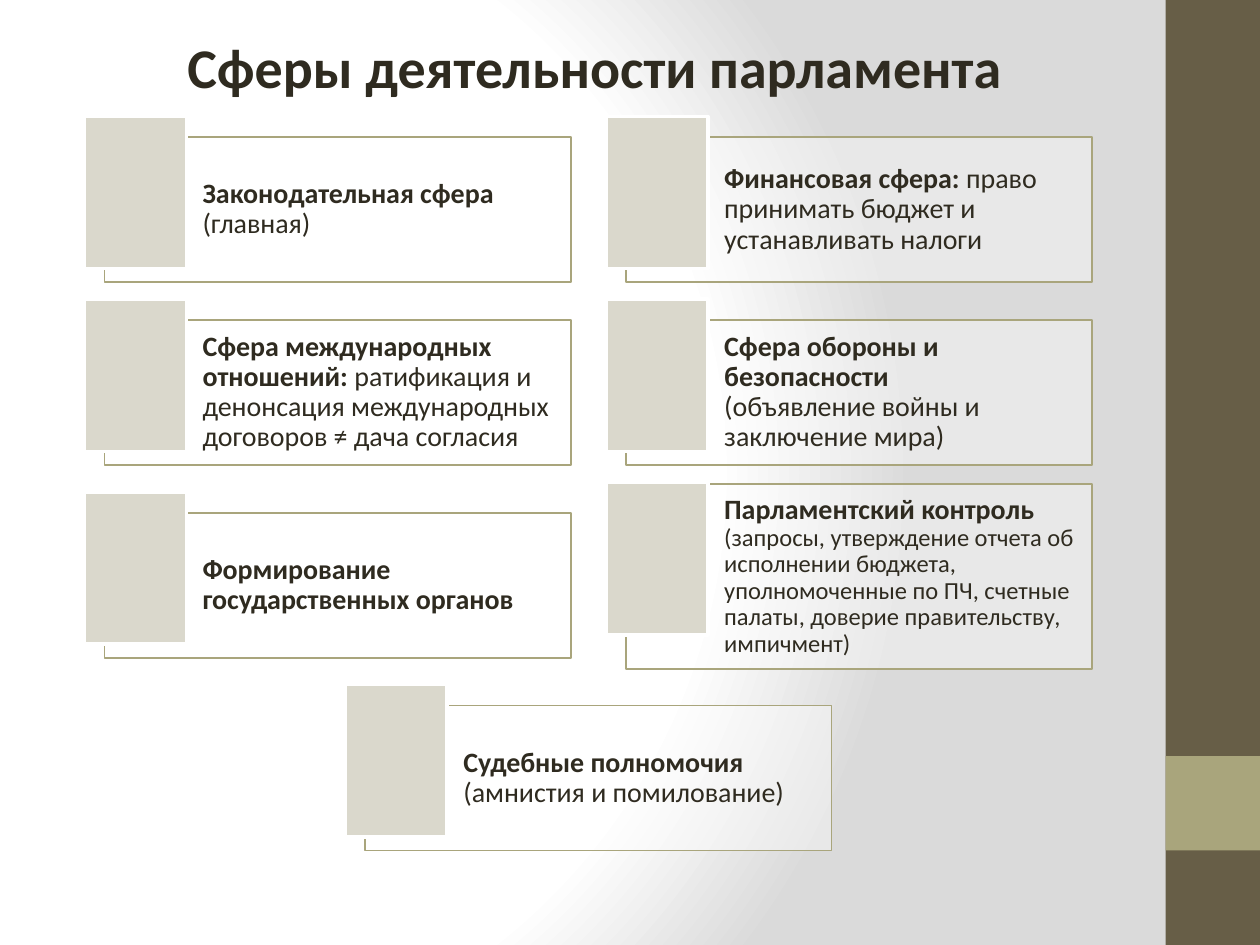
import pptx
import pptx.dml.color
import pptx.enum.shapes
import pptx.enum.text
import pptx.oxml
import pptx.oxml.ns
import pptx.util

Pt = pptx.util.Pt
RGB = pptx.dml.color.RGBColor
qn = pptx.oxml.ns.qn
ALIGN = pptx.enum.text.PP_ALIGN
ANCHOR = pptx.enum.text.MSO_ANCHOR
RECT = pptx.enum.shapes.MSO_SHAPE.RECTANGLE

WHITE = RGB(0xFF, 0xFF, 0xFF)
GREY = RGB(0xDA, 0xDA, 0xDA)
BROWN = RGB(0x67, 0x5E, 0x47)
OLIVE = RGB(0xA9, 0xA5, 0x7C)
SAND = RGB(0xDA, 0xD8, 0xCC)
INK = RGB(0x2F, 0x2B, 0x20)

# Card grid, in points
LEFT, RIGHT, MID = 59.76, 357.84, 208.8
ROWS = (78.48, 182.88, 293.04, 403.2)
CARD_W, CARD_H = 266.4, 82.8

# Left, top, height, rise of the tile, bold words, plain words, plain size
CARDS = [
    (LEFT, ROWS[0], CARD_H, 12, "Законодательная сфера", " (главная)", 16),
    (RIGHT, ROWS[0], CARD_H, 12, "Финансовая сфера:",
     " право принимать бюджет и устанавливать налоги", 16),
    (LEFT, ROWS[1], CARD_H, 12, "Сфера международных отношений: ",
     "ратификация и денонсация международных договоров ≠ дача согласия", 16),
    (RIGHT, ROWS[1], CARD_H, 12, "Сфера обороны и безопасности \v",
     "(объявление войны и заключение мира)", 16),
    (LEFT, ROWS[2], CARD_H, 12, "Формирование государственных органов", "", 16),
    (RIGHT, 276.5, 105.8, 0.7, "Парламентский контроль \v",
     "(запросы, утверждение отчета об исполнении бюджета, уполномоченные "
     "по ПЧ, счетные палаты, доверие правительству, импичмент)", 14),
    (MID, ROWS[3], CARD_H, 12, "Судебные полномочия\v",
     "(амнистия и помилование)", 16),
]


class Page:
    font = "Calibri"

    def __init__(self, deck):
        self.slide = deck.slides.add_slide(deck.slide_layouts[6])

    def back(self):
        """Radial white to grey background."""
        self.slide.background.fill.gradient()
        old = next(self.slide.element.iter(qn("a:gradFill")))
        stops = "".join(
            f'<a:gs pos="{pos}"><a:srgbClr val="{tone}"/></a:gs>'
            for pos, tone in ((0, WHITE), (75000, WHITE), (100000, GREY)))
        new = pptx.oxml.parse_xml(
            f'<a:gradFill {pptx.oxml.ns.nsdecls("a")} rotWithShape="1">'
            f'<a:gsLst>{stops}</a:gsLst><a:path path="circle">'
            '<a:fillToRect l="20000" t="50000" r="100000" b="50000"/>'
            '</a:path></a:gradFill>')
        old.getparent().replace(old, new)

    def box(self, x, y, w, h, fill, line=None, width=1, alpha=None):
        shape = self.slide.shapes.add_shape(RECT, Pt(x), Pt(y), Pt(w), Pt(h))
        shape.shadow.inherit = False
        shape.fill.solid()
        shape.fill.fore_color.rgb = fill
        if alpha is not None:
            tone = shape.element.spPr.find(qn("a:solidFill"))[0]
            tone.append(pptx.oxml.parse_xml(
                f'<a:alpha {pptx.oxml.ns.nsdecls("a")} val="{alpha * 1000}"/>'))
        if line is None:
            shape.line.fill.background()
        else:
            shape.line.color.rgb = line
            shape.line.width = Pt(width)
        return shape

    def style(self, run, size, bold):
        run.font.name = self.font
        run.font.size = Pt(size)
        run.font.bold = bold
        run.font.color.rgb = INK

    def card(self, x, y, h, rise, head, tail, size):
        """Framed text with a tile over its top left corner."""
        frame = self.box(x, y, CARD_W, h, WHITE, OLIVE, 1, 40).text_frame
        frame.word_wrap = True
        frame.vertical_anchor = ANCHOR.MIDDLE
        frame.margin_left = Pt(56)
        frame.margin_top = frame.margin_right = frame.margin_bottom = Pt(5)
        para = frame.paragraphs[0]
        para.text = head
        para.alignment = ALIGN.LEFT
        para.line_spacing = 0.9
        self.style(para.runs[0], 16, True)
        if tail:
            run = para.add_run()
            run.text = tail
            self.style(run, size, False)
        self.box(x - 11.5, y - rise, 58.2, 87.1, SAND, WHITE, 2)

    def title(self, x, y, w, h, text):
        shape = self.slide.shapes.add_textbox(Pt(x), Pt(y), Pt(w), Pt(h))
        frame = shape.text_frame
        frame.word_wrap = True
        frame.text = text
        para = frame.paragraphs[0]
        para.alignment = ALIGN.CENTER
        self.style(para.runs[0], 32, True)


def main():
    deck = pptx.Presentation()
    deck.slide_width, deck.slide_height = Pt(720), Pt(540)
    page = Page(deck)

    # Background and side band
    page.back()
    page.box(666, 0, 54, 540, BROWN)
    page.box(666, 432, 54, 54, OLIVE)

    # Cards
    for card in CARDS:
        page.card(*card)

    # Title
    page.title(31, 15, 617.8, 46, "Сферы деятельности парламента")
    deck.save("out.pptx")


if __name__ == "__main__":
    main()
